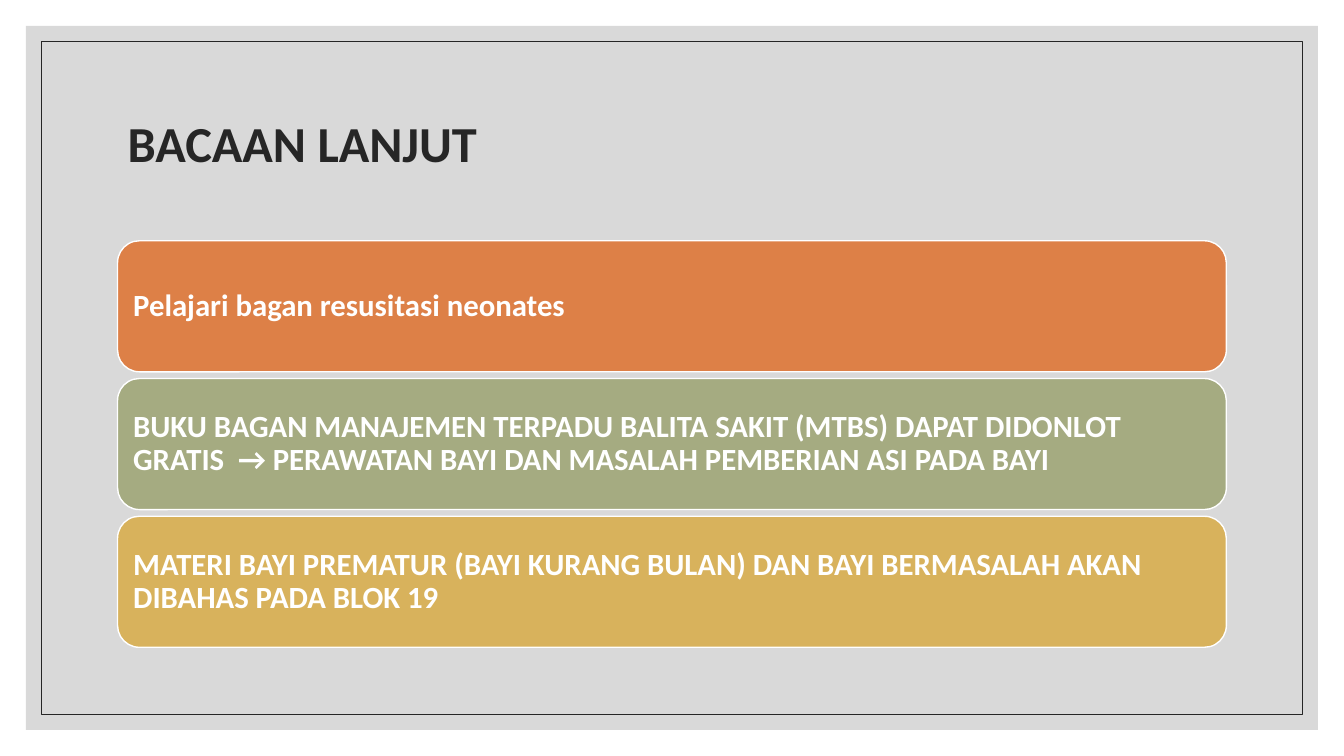
from collections import namedtuple
from dataclasses import dataclass

from pptx import Presentation
from pptx.dml.color import RGBColor
from pptx.enum.shapes import MSO_SHAPE
from pptx.enum.text import MSO_ANCHOR, MSO_AUTO_SIZE, PP_ALIGN
from pptx.util import Pt

Box = namedtuple("Box", "left top width height")


@dataclass(frozen=True)
class Theme:
    font: str = "Calibri"
    title_size: int = 36
    card_size: int = 22
    panel: str = "D9D9D9"
    ink: str = "262626"
    white: str = "FFFFFF"
    cards: tuple = ("DD8047", "A5AB81", "D8B25C")


THEME = Theme()
SLIDE = Box(0, 0, 960, 540)
PANEL_MARGIN = 18.6
FRAME_MARGIN = 29.5
TITLE = Box(84, 50.4, 792, 108)
CARDS = Box(84, 172, 792, 290.4)
CARD_GAP = 4.8
READINGS = (
    "Pelajari bagan resusitasi neonates",
    "BUKU BAGAN MANAJEMEN TERPADU BALITA SAKIT (MTBS) DAPAT DIDONLOT GRATIS  → "
    "PERAWATAN BAYI DAN MASALAH PEMBERIAN ASI PADA BAYI",
    "MATERI BAYI PREMATUR (BAYI KURANG BULAN) DAN BAYI BERMASALAH AKAN DIBAHAS PADA BLOK 19",
)


def set_attributes(target, values):
    for name, value in values.items():
        setattr(target, name, value)


def place(shape, box):
    set_attributes(shape, {name: Pt(value) for name, value in box._asdict().items()})


def inset(box, margin):
    return Box(box.left + margin, box.top + margin,
               box.width - 2 * margin, box.height - 2 * margin)


def add_block(slide, kind, box, fill=None, line=None, line_width=1):
    shape = slide.shapes.add_shape(kind, *map(Pt, box))
    shape.shadow.inherit = False
    if fill:
        shape.fill.solid()
        shape.fill.fore_color.rgb = RGBColor.from_string(fill)
    else:
        shape.fill.background()
    if line:
        shape.line.color.rgb = RGBColor.from_string(line)
        shape.line.width = Pt(line_width)
    else:
        shape.line.fill.background()
    return shape


def write_text(shape, text, size, color, margin):
    frame = shape.text_frame
    frame.text = text
    set_attributes(frame, {
        "word_wrap": True,
        "auto_size": MSO_AUTO_SIZE.NONE,
        "vertical_anchor": MSO_ANCHOR.MIDDLE,
        "margin_left": Pt(margin),
        "margin_right": Pt(margin),
    })
    paragraph = frame.paragraphs[0]
    set_attributes(paragraph, {"alignment": PP_ALIGN.LEFT, "line_spacing": 0.9})
    font = paragraph.runs[0].font
    set_attributes(font, {"name": THEME.font, "size": Pt(size), "bold": True})
    font.color.rgb = RGBColor.from_string(color)


def add_backdrop(slide, box):
    panel = add_block(slide, MSO_SHAPE.RECTANGLE, inset(box, PANEL_MARGIN), fill=THEME.panel)
    frame = add_block(slide, MSO_SHAPE.RECTANGLE, inset(box, FRAME_MARGIN),
                      line=THEME.ink, line_width=0.5)
    title = slide.shapes.title
    for shape in (panel, frame):
        title.element.addprevious(shape.element)


def add_title(slide, box, text):
    title = slide.shapes.title
    place(title, box)
    write_text(title, text, THEME.title_size, THEME.ink, 7.2)


def add_cards(slide, box, texts):
    height = (box.height - CARD_GAP * (len(texts) - 1)) / len(texts)
    for index, (text, color) in enumerate(zip(texts, THEME.cards)):
        top = box.top + index * (height + CARD_GAP)
        card = add_block(slide, MSO_SHAPE.ROUNDED_RECTANGLE,
                         Box(box.left, top, box.width, height), color, THEME.white)
        write_text(card, text, THEME.card_size, THEME.white, 6.6)


def main():
    presentation = Presentation()
    set_attributes(presentation, {
        "slide_width": Pt(SLIDE.width),
        "slide_height": Pt(SLIDE.height),
    })
    slide = presentation.slides.add_slide(presentation.slide_layouts.get_by_name("Title Only"))
    add_backdrop(slide, SLIDE)
    add_title(slide, TITLE, "BACAAN LANJUT")
    add_cards(slide, CARDS, READINGS)
    presentation.save("out.pptx")


if __name__ == "__main__":
    main()
